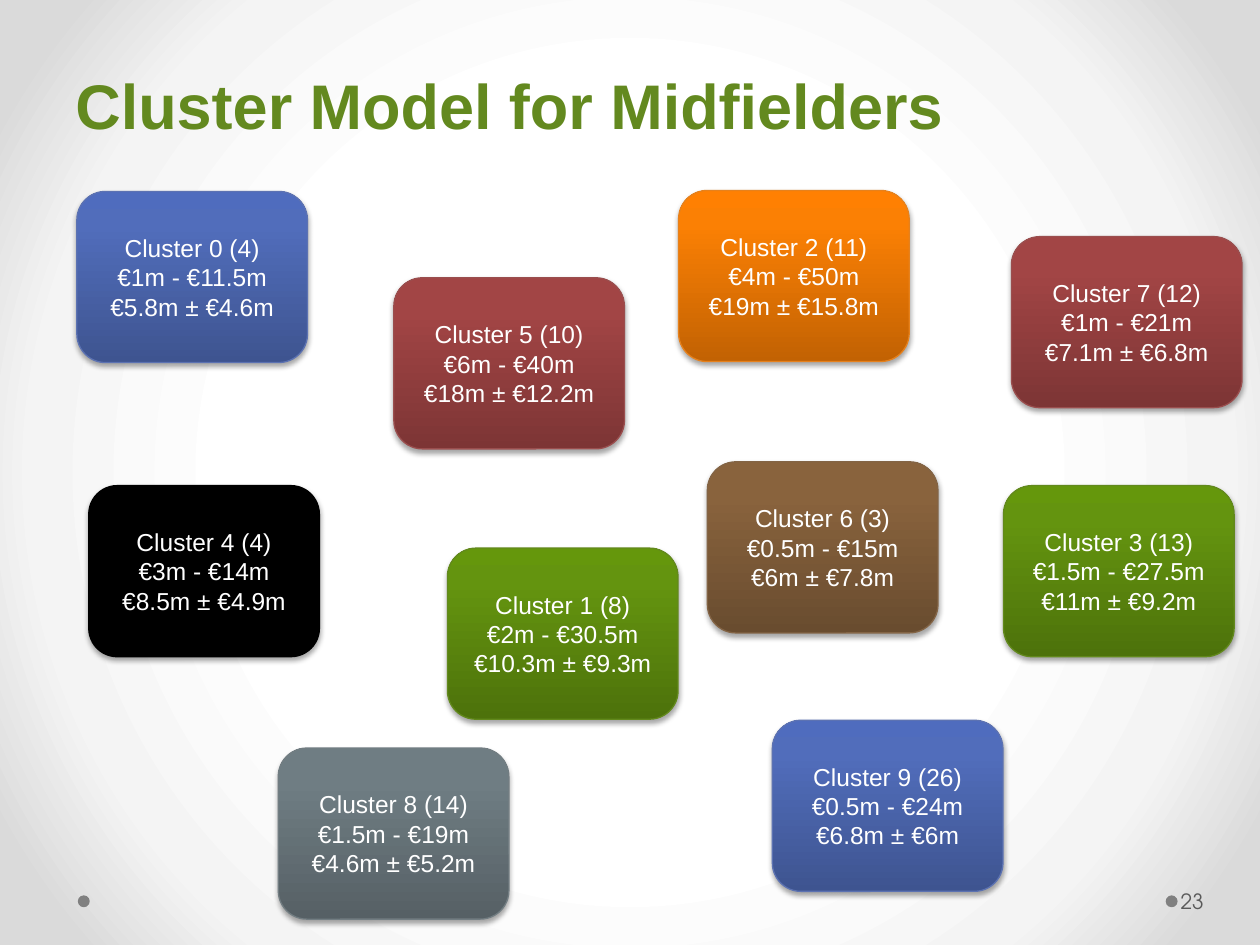
from lxml.etree import SubElement as Sub
from pptx import Presentation
from pptx.dml.color import RGBColor as RGB
from pptx.enum.shapes import MSO_SHAPE as Shape
from pptx.enum.text import MSO_ANCHOR as Anchor, PP_ALIGN as Align
from pptx.oxml.ns import qn
from pptx.util import Cm, Pt

WHITE = RGB(0xFF, 0xFF, 0xFF)
BLACK = RGB(0x00, 0x00, 0x00)
PALE_GRAY = RGB(0xF4, 0xF4, 0xF4)
EDGE_GRAY = RGB(0xDA, 0xDA, 0xDA)
DOT_GRAY = RGB(0x80, 0x80, 0x80)
NUMBER_GRAY = RGB(0x59, 0x59, 0x59)
TITLE_GREEN = RGB(0x63, 0x89, 0x1F)

# Each theme: bottom, upper and top shade, then border
BLUE = (RGB(0x3E, 0x54, 0x90), RGB(0x51, 0x6D, 0xBB), RGB(0x4F, 0x6C, 0xBE), RGB(0x5C, 0x72, 0xB2))
GREEN = (RGB(0x4D, 0x72, 0x0B), RGB(0x64, 0x94, 0x0F), RGB(0x65, 0x97, 0x0C), RGB(0x62, 0x89, 0x1C))
ORANGE = (RGB(0xC2, 0x62, 0x03), RGB(0xFB, 0x80, 0x04), RGB(0xFF, 0x80, 0x02), RGB(0xE6, 0x81, 0x1C))
RED = (RGB(0x7D, 0x35, 0x35), RGB(0xA2, 0x45, 0x45), RGB(0xA4, 0x43, 0x43), RGB(0x9A, 0x4E, 0x4E))
BROWN = (RGB(0x69, 0x4C, 0x2F), RGB(0x89, 0x63, 0x3D), RGB(0x8B, 0x63, 0x3C), RGB(0x83, 0x64, 0x45))
SLATE = (RGB(0x56, 0x60, 0x65), RGB(0x6F, 0x7D, 0x83), RGB(0x6F, 0x7E, 0x84), RGB(0x72, 0x7D, 0x82))
SOLID_BLACK = (BLACK,) * 4

CARD_WIDTH, CARD_HEIGHT = Cm(4.65), Cm(3.45)
DOT_SIZE = Cm(0.24)

CLUSTERS = [
    (1.55, 3.86, BLUE, "Cluster 0 (4)", "€1m - €11.5m", "€5.8m ± €4.6m"),
    (9.02, 11.05, GREEN, "Cluster 1 (8)", "€2m - €30.5m", "€10.3m ± €9.3m"),
    (13.68, 3.84, ORANGE, "Cluster 2 (11)", "€4m - €50m", "€19m ± €15.8m"),
    (20.23, 9.79, GREEN, "Cluster 3 (13)", "€1.5m - €27.5m", "€11m ± €9.2m"),
    (1.79, 9.79, SOLID_BLACK, "Cluster 4 (4)", "€3m - €14m", "€8.5m ± €4.9m"),
    (7.94, 5.6, RED, "Cluster 5 (10)", "€6m - €40m", "€18m ± €12.2m"),
    (14.26, 9.31, BROWN, "Cluster 6 (3)", "€0.5m - €15m", "€6m ± €7.8m"),
    (20.39, 4.77, RED, "Cluster 7 (12)", "€1m - €21m", "€7.1m ± €6.8m"),
    (5.61, 15.08, SLATE, "Cluster 8 (14)", "€1.5m - €19m", "€4.6m ± €5.2m"),
    (15.57, 14.52, BLUE, "Cluster 9 (26)", "€0.5m - €24m", "€6.8m ± €6m"),
]


def write(frame, *lines, size, color, font="Arial", bold=False,
          align=Align.LEFT, anchor=Anchor.MIDDLE, spacing=None):
    frame.word_wrap = True
    frame.vertical_anchor = anchor
    frame.text = "\n".join(lines)
    for paragraph in frame.paragraphs:
        paragraph.alignment = align
        paragraph.line_spacing = spacing
        style = paragraph.runs[0].font
        style.name, style.size, style.bold = font, Pt(size), bold
        style.color.rgb = color


def set_gradient(owner, fill, stops, radial=False):
    fill.gradient()
    gradient = next(owner.iter(qn("a:gradFill")))
    for child in list(gradient):
        gradient.remove(child)
    stop_list = Sub(gradient, qn("a:gsLst"))
    for percent, color in stops:
        stop = Sub(stop_list, qn("a:gs"), pos=str(percent * 1000))
        Sub(stop, qn("a:srgbClr"), val=str(color))
    if radial:
        circle = Sub(gradient, qn("a:path"), path="circle")
        Sub(circle, qn("a:fillToRect"), l="50000", t="50000", r="50000", b="50000")
    else:
        Sub(gradient, qn("a:lin"), ang="16200000", scaled="0")


def add_shadow(card):
    card.shadow.inherit = False
    effects = card._element.spPr.find(qn("a:effectLst"))
    shadow = Sub(effects, qn("a:outerShdw"), blurRad=str(Pt(3.1)), dist=str(Pt(1.8)),
                 dir="5400000", rotWithShape="0")
    shade = Sub(shadow, qn("a:srgbClr"), val=str(BLACK))
    Sub(shade, qn("a:alpha"), val="35000")


def add_cluster(slide, left, top, theme, *lines):
    card = slide.shapes.add_shape(Shape.ROUNDED_RECTANGLE, Cm(left), Cm(top), CARD_WIDTH, CARD_HEIGHT)
    *shades, border = theme
    if theme is SOLID_BLACK:
        card.fill.solid()
        card.fill.fore_color.rgb = BLACK
    else:
        set_gradient(card._element, card.fill, zip((0, 80, 100), shades))
    card.line.color.rgb = border
    card.line.width = Pt(0.75)
    add_shadow(card)
    write(card.text_frame, *lines, size=14, color=WHITE, align=Align.CENTER)


def add_dot(slide, left):
    dot = slide.shapes.add_shape(Shape.OVAL, Cm(left), Cm(18.05), DOT_SIZE, DOT_SIZE)
    dot.shadow.inherit = False
    dot.fill.solid()
    dot.fill.fore_color.rgb = DOT_GRAY
    dot.line.fill.background()


def add_label(slide, left, top, width, height):
    return slide.shapes.add_textbox(Cm(left), Cm(top), Cm(width), Cm(height)).text_frame


def main():
    deck = Presentation()
    deck.slide_width, deck.slide_height = Cm(25.4), Cm(19.05)
    slide = deck.slides.add_slide(deck.slide_layouts[6])
    set_gradient(slide._element, slide.background.fill,
                 [(50, WHITE), (76, PALE_GRAY), (92, EDGE_GRAY)], radial=True)

    for left in (23.5, 1.57):
        add_dot(slide, left)
    title = add_label(slide, 1.27, 0, 22.86, 3)
    write(title, "Cluster Model for Midfielders", size=36, color=TITLE_GREEN,
          bold=True, anchor=Anchor.BOTTOM, spacing=Pt(58))
    for cluster in CLUSTERS:
        add_cluster(slide, *cluster)

    page_number = add_label(slide, 23.72, 17.65, 1.55, 1.02)
    page_number.margin_left = Cm(0.08)
    page_number.margin_right = Cm(0.13)
    write(page_number, "23", size=12, color=NUMBER_GRAY, font="TeX Gyre Adventor")

    deck.save("out.pptx")


if __name__ == "__main__":
    main()
